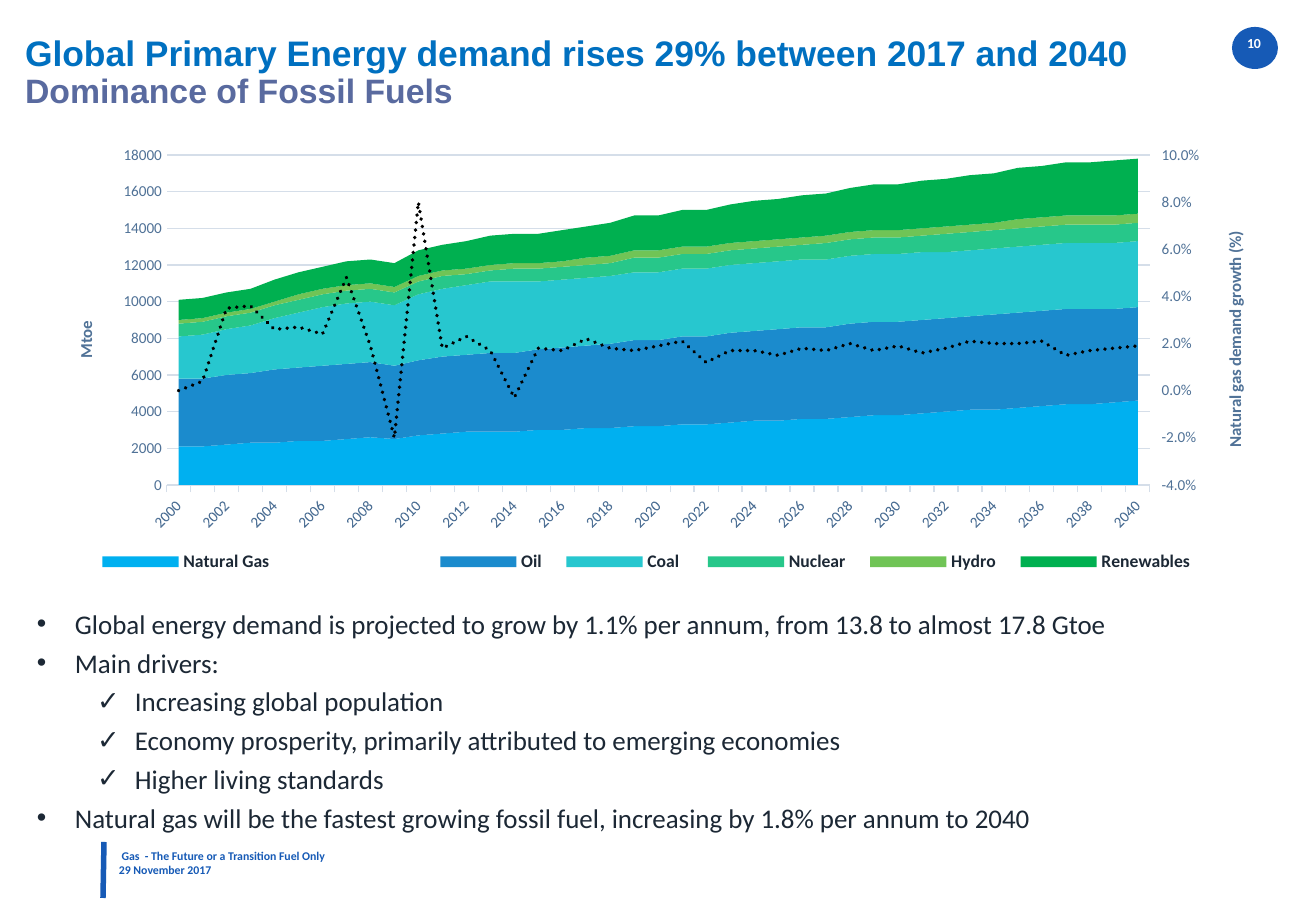
from lxml import etree
from pptx import Presentation
from pptx.chart.axis import ValueAxis
from pptx.chart.data import CategoryChartData
from pptx.dml.color import RGBColor
from pptx.enum.chart import XL_CHART_TYPE, XL_LEGEND_POSITION, XL_MARKER_STYLE, XL_TICK_MARK
from pptx.enum.dml import MSO_LINE
from pptx.enum.shapes import MSO_CONNECTOR, MSO_SHAPE
from pptx.enum.text import MSO_ANCHOR, PP_ALIGN
from pptx.oxml import parse_xml
from pptx.oxml.ns import nsdecls, qn
from pptx.util import Pt

PX = 7526
CENTER, JUSTIFY = PP_ALIGN.CENTER, PP_ALIGN.JUSTIFY
TOP, MIDDLE = MSO_ANCHOR.TOP, MSO_ANCHOR.MIDDLE
OUTSIDE, NO_TICK = XL_TICK_MARK.OUTSIDE, XL_TICK_MARK.NONE
BLUE, INK, SLATE, GRID = "165AB6", "1C2835", "507297", "D5DEE9"

TITLE = [("Global Primary Energy demand rises 29% between 2017 and 2040", 21, "0070C0"),
         ("Dominance of Fossil Fuels", 20, "596A9F")]
BULLETS = [
    (0, "Global energy demand is projected to grow by 1.1% per annum, from 13.8 to almost 17.8 Gtoe"),
    (0, "Main drivers:"),
    (1, "Increasing global population"),
    (1, "Economy prosperity, primarily attributed to emerging economies"),
    (1, "Higher living standards"),
    (0, "Natural gas will be the fastest growing fossil fuel, increasing by 1.8% per annum to 2040"),
]
BULLET_LEVELS = [("•", 38), ("✓", 98)]
FOOTER = [" Gas  - The Future or a Transition Fuel Only", "29 November 2017"]
YEARS = [str(year) for year in range(2000, 2041)]
FUELS_IN_HUNDREDS = [
    ("Natural Gas", "00B0F0",
     [21, 21, 22, 23, 23, 24, 24, 25, 26, 25, 27, 28, 29, 29, 29, 30, 30, 31, 31, 32, 32,
      33, 33, 34, 35, 35, 36, 36, 37, 38, 38, 39, 40, 41, 41, 42, 43, 44, 44, 45, 46]),
    ("Oil", "1B8BCD",
     [37, 37, 38, 38, 40, 40, 41, 41, 41, 40, 41, 42, 42, 43, 43, 44, 45, 45, 46, 47, 47,
      48, 48, 49, 49, 50, 50, 50, 51, 51, 51, 51, 51, 51, 52, 52, 52, 52, 52, 51, 51]),
    ("Coal ", "27C7CF",
     [23, 24, 25, 26, 28, 30, 32, 33, 33, 33, 36, 37, 38, 39, 39] + [37] * 17 + [36] * 9),
    ("Nuclear", "27C78A", [7] * 12 + [6] * 2 + [7] * 5 + [8] * 8 + [9] * 5 + [10] * 9),
    ("Hydro", "70C456", [2] * 5 + [3] * 12 + [4] * 18 + [5] * 6),
    ("Renewables", "00B050",
     [11, 11, 11, 11, 12, 12, 12, 13, 13, 13, 14, 14, 15, 16, 16, 16, 17, 17, 18, 19, 19,
      20, 20, 21, 22, 22, 23, 23, 24, 25, 25, 26, 26, 27, 27, 28, 28, 29, 29, 30, 30]),
]
GROWTH_NAME = "Natural gas demand growth (%)"
GROWTH = [None, 0.004, 0.035, 0.036, 0.026, 0.027, 0.024, 0.048, 0.019, -0.02, 0.08, 0.018,
          0.023, 0.017, -0.003, 0.018, 0.017, 0.022, 0.018, 0.017, 0.019, 0.021, 0.012, 0.017,
          0.017, 0.015, 0.018, 0.017, 0.02, 0.017, 0.019, 0.016, 0.018, 0.021, 0.02, 0.02,
          0.021, 0.015, 0.017, 0.018, 0.019]


def color(code):
    return RGBColor.from_string(code)


def px(*lengths):
    return [length * PX for length in lengths]


def set_font(font, size, code, bold=False, name="Calibri"):
    for key, value in {"size": Pt(size), "bold": bold, "name": name}.items():
        setattr(font, key, value)
    font.color.rgb = color(code)


def add_text(page, bounds, insets, anchor=TOP, wrap=True):
    frame = page.shapes.add_textbox(*px(*bounds)).text_frame
    horizontal, vertical = px(*insets)
    for key, value in {"margin_left": horizontal, "margin_right": horizontal,
                       "margin_top": vertical, "margin_bottom": vertical,
                       "vertical_anchor": anchor, "word_wrap": wrap}.items():
        setattr(frame, key, value)
    return frame


def add_para(frame, index, text, size, code, bold=True, name="Calibri", **layout):
    para = frame.add_paragraph() if index else frame.paragraphs[0]
    for key, value in layout.items():
        setattr(para, key, value)
    span = para.add_run()
    span.text = text
    set_font(span.font, size, code, bold, name)
    return para


def set_bullet(para, level):
    symbol, indent = BULLET_LEVELS[level]
    properties = para._p.get_or_add_pPr()
    properties.set("marL", str(indent * PX))
    properties.set("indent", str(-38 * PX))
    etree.SubElement(properties, qn("a:buFont")).set("typeface", "Arial")
    etree.SubElement(properties, qn("a:buChar")).set("char", symbol)


def set_layout(parent, **values):
    for old in parent.findall(qn("c:layout")):
        parent.remove(old)
    layout = etree.Element(qn("c:layout"))
    manual = etree.SubElement(layout, qn("c:manualLayout"))
    for key, value in values.items():
        etree.SubElement(manual, qn("c:" + key)).set("val", str(value))
    overlay = parent.find(qn("c:overlay"))
    parent.insert(0 if overlay is None else parent.index(overlay), layout)


def format_value_axis(axis, title, low, high, step, number_format, tick, place):
    for key, value in {"minimum_scale": low, "maximum_scale": high, "major_unit": step,
                       "major_tick_mark": tick, "minor_tick_mark": NO_TICK}.items():
        setattr(axis, key, value)
    axis.tick_labels.number_format = number_format
    axis.tick_labels.number_format_is_linked = False
    set_font(axis.tick_labels.font, 9, SLATE)
    axis.format.line.fill.background()
    frame = axis.axis_title.text_frame
    add_para(frame, 0, title, 10, SLATE)
    body = frame._txBody.find(qn("a:bodyPr"))
    body.set("rot", "-5400000")
    body.set("vert", "horz")
    x, y = place
    set_layout(frame._txBody.getparent().getparent(), xMode="edge", yMode="edge", x=x, y=y)


def move_growth_to_line(plot_area):
    areas = plot_area.find(qn("c:areaChart"))
    growth = areas.findall(qn("c:ser"))[-1]
    lines = parse_xml(
        f'<c:lineChart {nsdecls("c")}><c:grouping val="standard"/><c:varyColors val="0"/>'
        '<c:marker val="1"/><c:axId val="5001"/><c:axId val="5002"/></c:lineChart>')
    lines.insert(2, growth)
    areas.addnext(lines)
    years = parse_xml(
        f'<c:catAx {nsdecls("c")}><c:axId val="5001"/><c:scaling><c:orientation val="minMax"/>'
        '</c:scaling><c:delete val="1"/><c:axPos val="b"/><c:crossAx val="5002"/>'
        '<c:crosses val="autoZero"/></c:catAx>')
    right = parse_xml(
        f'<c:valAx {nsdecls("c")}><c:axId val="5002"/><c:scaling><c:orientation val="minMax"/>'
        '</c:scaling><c:delete val="0"/><c:axPos val="r"/><c:tickLblPos val="nextTo"/>'
        '<c:crossAx val="5001"/><c:crosses val="max"/><c:crossBetween val="between"/></c:valAx>')
    plot_area.findall(qn("c:valAx"))[-1].addnext(years)
    years.addnext(right)
    return ValueAxis(right)


def add_energy_chart(page):
    data = CategoryChartData(number_format="0")
    data.categories = YEARS
    for name, _, hundreds in FUELS_IN_HUNDREDS:
        data.add_series(name, [value * 100 for value in hundreds])
    data.add_series(GROWTH_NAME, GROWTH, number_format="0.0%")
    chart = page.shapes.add_chart(XL_CHART_TYPE.AREA_STACKED, *px(60, 137, 1190, 452), data).chart
    chart.has_title = False
    set_font(chart.font, 10, INK)
    plot_area = chart.element.xpath("c:chart/c:plotArea")[0]
    left_axis, year_axis = chart.value_axis, chart.category_axis
    right_axis = move_growth_to_line(plot_area)
    areas, lines = chart.plots
    areas.vary_by_categories = lines.vary_by_categories = False
    for fuel, (_, code, _) in zip(areas.series, FUELS_IN_HUNDREDS):
        fuel.format.fill.solid()
        fuel.format.fill.fore_color.rgb = color(code)
    growth = lines.series[0]
    growth.smooth = False
    growth.marker.style = XL_MARKER_STYLE.NONE
    growth.format.line.color.rgb = color("000000")
    growth.format.line.width = Pt(2.25)
    growth.format.line.dash_style = MSO_LINE.ROUND_DOT
    plot_area.xpath("c:lineChart/c:ser/c:spPr/a:ln")[0].set("cap", "rnd")

    left_axis.has_major_gridlines = True
    year_axis.has_major_gridlines = False
    year_axis.major_tick_mark = OUTSIDE
    set_font(year_axis.tick_labels.font, 9, SLATE)
    for line in (left_axis.major_gridlines.format.line, year_axis.format.line):
        line.color.rgb = color(GRID)
        line.width = Pt(0.75)
    years = plot_area.find(qn("c:catAx"))
    years.xpath("c:txPr/a:bodyPr")[0].set("rot", "-2700000")
    skip = etree.Element(qn("c:tickLblSkip"))
    skip.set("val", "2")
    years.find(qn("c:noMultiLvlLbl")).addprevious(skip)
    for cross in plot_area.xpath("c:valAx/c:crossBetween"):
        cross.set("val", "between")
    format_value_axis(left_axis, "Mtoe", 0, 18000, 2000, "0", NO_TICK, (0.01, 0.4))
    format_value_axis(right_axis, GROWTH_NAME, -0.04, 0.1, 0.02, "0.0%", OUTSIDE, (0.98, 0.2))
    set_layout(plot_area, layoutTarget="inner", xMode="edge", yMode="edge",
               x=0.09, y=0.04, w=0.83, h=0.73)

    chart.has_legend = True
    chart.legend.position = XL_LEGEND_POSITION.BOTTOM
    chart.legend.include_in_layout = False
    set_font(chart.legend.font, 10.5, INK, True)
    set_layout(chart.element.xpath("c:chart/c:legend")[0], xMode="edge", yMode="edge",
               x=0.02, y=0.91, w=0.95, h=0.06)
    for blanks in chart.element.xpath("c:chart/c:dispBlanksAs"):
        blanks.set("val", "zero")


def main():
    deck = Presentation()
    deck.slide_width, deck.slide_height = px(1316, 911)
    page = deck.slides.add_slide(deck.slide_layouts[6])

    rule = page.shapes.add_connector(MSO_CONNECTOR.STRAIGHT, *px(104, 842, 103, 898))
    rule.line.color.rgb = color(BLUE)
    rule.line.width = Pt(3.25)
    etree.SubElement(rule._element.spPr, qn("a:effectLst"))
    footer = add_text(page, (113, 845, 346, 35), (6, 4))
    for index, text in enumerate(FOOTER):
        add_para(footer, index, text, 7, BLUE)

    badge = page.shapes.add_shape(MSO_SHAPE.OVAL, *px(1232, 27, 46, 42))
    badge.shadow.inherit = False
    badge.fill.solid()
    badge.fill.fore_color.rgb = color(BLUE)
    badge.line.fill.background()
    number = add_text(page, (1239, 31, 30, 24), (7, 4), wrap=False)
    add_para(number, 0, "10", 8.2, "FFFFFF", alignment=CENTER)

    heading = add_text(page, (25, 34, 1145, 78), (0, 0), MIDDLE)
    for index, (text, size, code) in enumerate(TITLE):
        add_para(heading, index, text, size, code, name="Arial", alignment=JUSTIFY, line_spacing=0.9)
    body = add_text(page, (25, 595, 1270, 248), (12, 6))
    for index, (level, text) in enumerate(BULLETS):
        para = add_para(body, index, text, 16, INK, False, level=level, line_spacing=Pt(23))
        set_bullet(para, level)
    add_energy_chart(page)
    deck.save("out.pptx")


if __name__ == "__main__":
    main()
